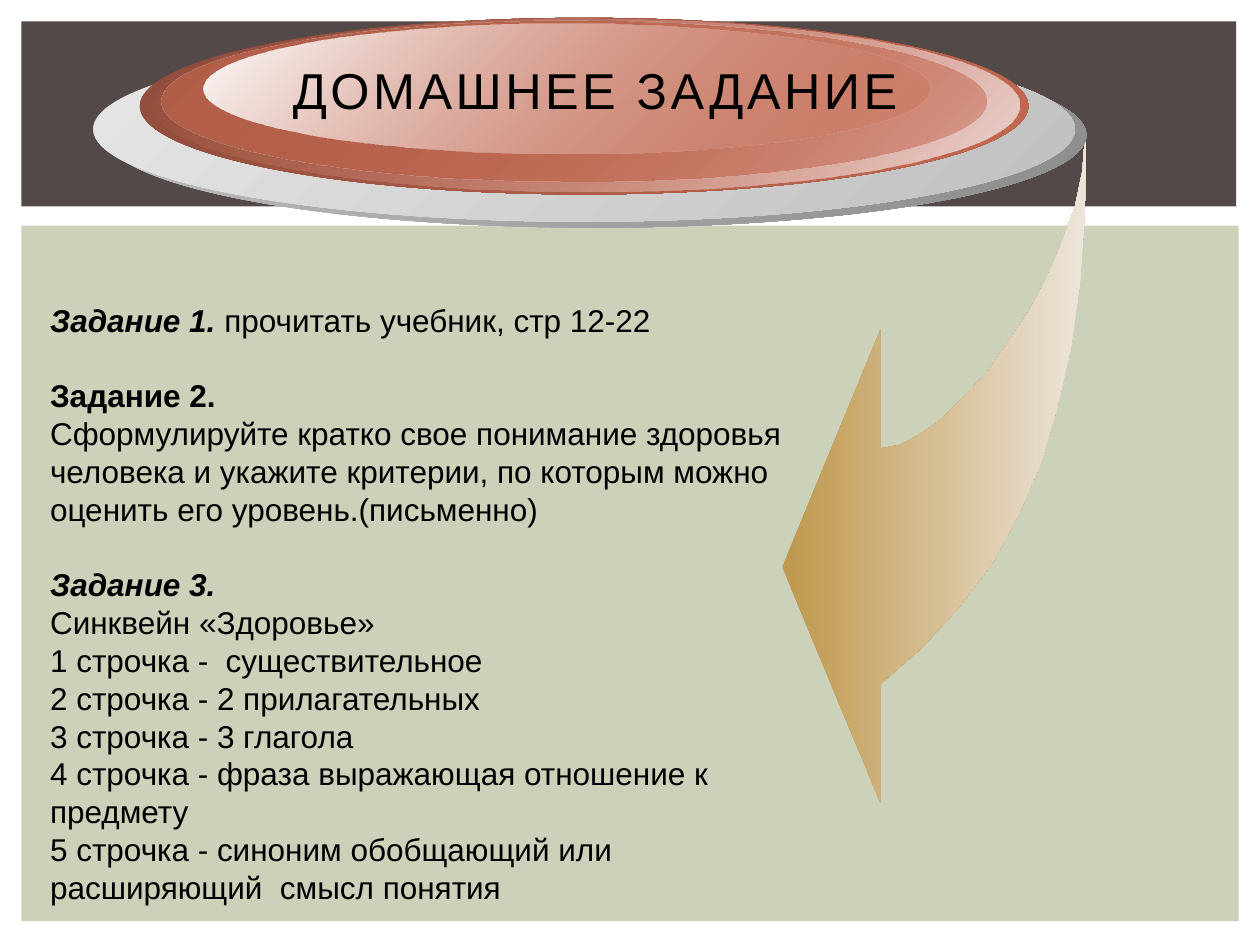
from lxml import etree
from pptx import Presentation, util as u
from pptx.dml.color import RGBColor
from pptx.enum import shapes as es, text as et
from pptx.oxml.ns import qn

THEME = dict(
    font="Arial", ink="000000", head=28.8, body=18, line=21.6, track=2,
    band="534949", panel="CCD1B9",
    arrow=(("BF974D", 100), ("EDE5DB", 100)),
)

TITLE = "ДОМАШНЕЕ ЗАДАНИЕ"
# Each paragraph: bold lead, lead is italic, plain text, starts a new task
TASKS = [
    ("Задание 1.", True, " прочитать учебник, стр 12-22", False),
    ("Задание 2.", False, "", True),
    ("", False, "Сформулируйте кратко свое понимание здоровья человека и укажите "
     "критерии, по которым можно оценить его уровень.(письменно)", False),
    ("Задание 3.", True, "", True),
    ("", False, "Синквейн «Здоровье»", False),
    ("", False, "1 строчка -  существительное", False),
    ("", False, "2 строчка - 2 прилагательных", False),
    ("", False, "3 строчка - 3 глагола", False),
    ("", False, "4 строчка - фраза выражающая отношение к предмету", False),
    ("", False, "5 строчка - синоним обобщающий или расширяющий  смысл понятия", False),
]

# Boxes are left, top, width, height in cm
PANELS = [
    ((0.43, 4.55, 24.54, 14.02), THEME["panel"]),
    ((0.43, 0.43, 24.49, 3.73), THEME["band"]),
]
# Gradient ends are colour and opacity in percent
DISCS = [
    ((2.11, 0.86, 19.79, 3.73), (("C0C0C0", 100), ("8C8C8C", 100))),
    ((1.88, 0.74, 19.79, 3.73), (("E6E6E6", 100), ("C0C0C0", 100))),
    ((2.82, 0.36, 17.91, 3.56), (("8E4B3A", 100), ("C66951", 100))),
    ((3.07, 0.38, 17.48, 3.48), (("C66951", 0), ("EDDAD7", 100))),
    ((3.25, 0.41, 16.64, 3.25), (("B35F49", 100), ("C66951", 48))),
    ((4.11, 0.48, 14.63, 2.62), (("FFFFFF", 100), ("C66951", 38))),
]
ARROW = [
    (21.89, 2.79), (21.87, 4.29), (21.77, 5.72), (21.59, 7.01), (21.31, 8.23),
    (20.98, 9.35), (20.55, 10.34), (20.02, 11.33), (19.38, 12.19),
    (18.62, 13.03), (17.75, 13.79), (17.75, 16.18), (15.77, 11.43),
    (17.75, 6.65), (17.75, 9.04), (18.14, 8.97), (18.54, 8.76), (19, 8.43),
    (19.43, 8), (19.91, 7.49), (20.32, 6.91), (20.75, 6.27), (21.11, 5.59),
    (21.41, 4.88), (21.67, 4.17), (21.82, 3.45), (21.87, 2.79),
]
HEAD = (3.84, 1.02, 16.33, 1.57)
BODY = (0.76, 5.94, 15.54, 14.1)


def place(box):
    return [u.Cm(n) for n in box]


def clean(shape):
    shape.shadow.inherit = False
    shape.line.fill.background()


def blend(shape, ends, angle):
    """Fill with a two-stop gradient; angle runs clockwise in degrees."""
    clean(shape)
    shape.fill.gradient()
    shape.fill.gradient_angle = -angle % 360
    for stop, (color, _) in zip(shape.fill.gradient_stops, ends):
        stop.color.rgb = RGBColor.from_string(color)
    tints = shape._element.spPr.iter(qn("a:srgbClr"))
    for tint, (_, alpha) in zip(tints, ends):
        if alpha < 100:
            etree.SubElement(tint, qn("a:alpha")).set("val", str(alpha * 1000))


def style(run, size, bold=False, italic=False):
    font = run.font
    font.name, font.size = THEME["font"], u.Pt(size)
    font.bold, font.italic = bold, italic
    font.color.rgb = RGBColor.from_string(THEME["ink"])


def add_text(slide, box):
    frame = slide.shapes.add_textbox(*place(box)).text_frame
    frame.word_wrap = True
    return frame


def add_title(slide):
    frame = add_text(slide, HEAD)
    frame.vertical_anchor = et.MSO_ANCHOR.MIDDLE
    frame.text = TITLE
    para = frame.paragraphs[0]
    para.alignment = et.PP_ALIGN.CENTER
    run = para.runs[0]
    style(run, THEME["head"])
    run.font._element.set("spc", str(THEME["track"] * 100))


def add_tasks(slide):
    frame = add_text(slide, BODY)
    for i, (lead, slant, plain, fresh) in enumerate(TASKS):
        para = frame.add_paragraph() if i else frame.paragraphs[0]
        para.line_spacing = u.Pt(THEME["line"])
        if fresh:
            para.space_before = u.Pt(THEME["line"])
        for words, bold, italic in ((lead, True, slant), (plain, False, False)):
            if words:
                run = para.add_run()
                run.text = words
                style(run, THEME["body"], bold, italic)


def main():
    deck = Presentation()
    deck.slide_width, deck.slide_height = u.Cm(25.4), u.Cm(19.05)
    slide = deck.slides.add_slide(deck.slide_layouts[6])

    for box, color in PANELS:
        panel = slide.shapes.add_shape(es.MSO_SHAPE.RECTANGLE, *place(box))
        clean(panel)
        panel.fill.solid()
        panel.fill.fore_color.rgb = RGBColor.from_string(color)

    points = [place(p) for p in ARROW]
    path = slide.shapes.build_freeform(*points[0])
    path.add_line_segments(points[1:], close=True)
    blend(path.convert_to_shape(), THEME["arrow"], 0)

    group = slide.shapes.add_group_shape()
    for box, ends in DISCS:
        disc = group.shapes.add_shape(es.MSO_SHAPE.OVAL, *place(box))
        blend(disc, ends, 45)

    add_title(slide)
    add_tasks(slide)
    deck.save("out.pptx")


if __name__ == "__main__":
    main()
